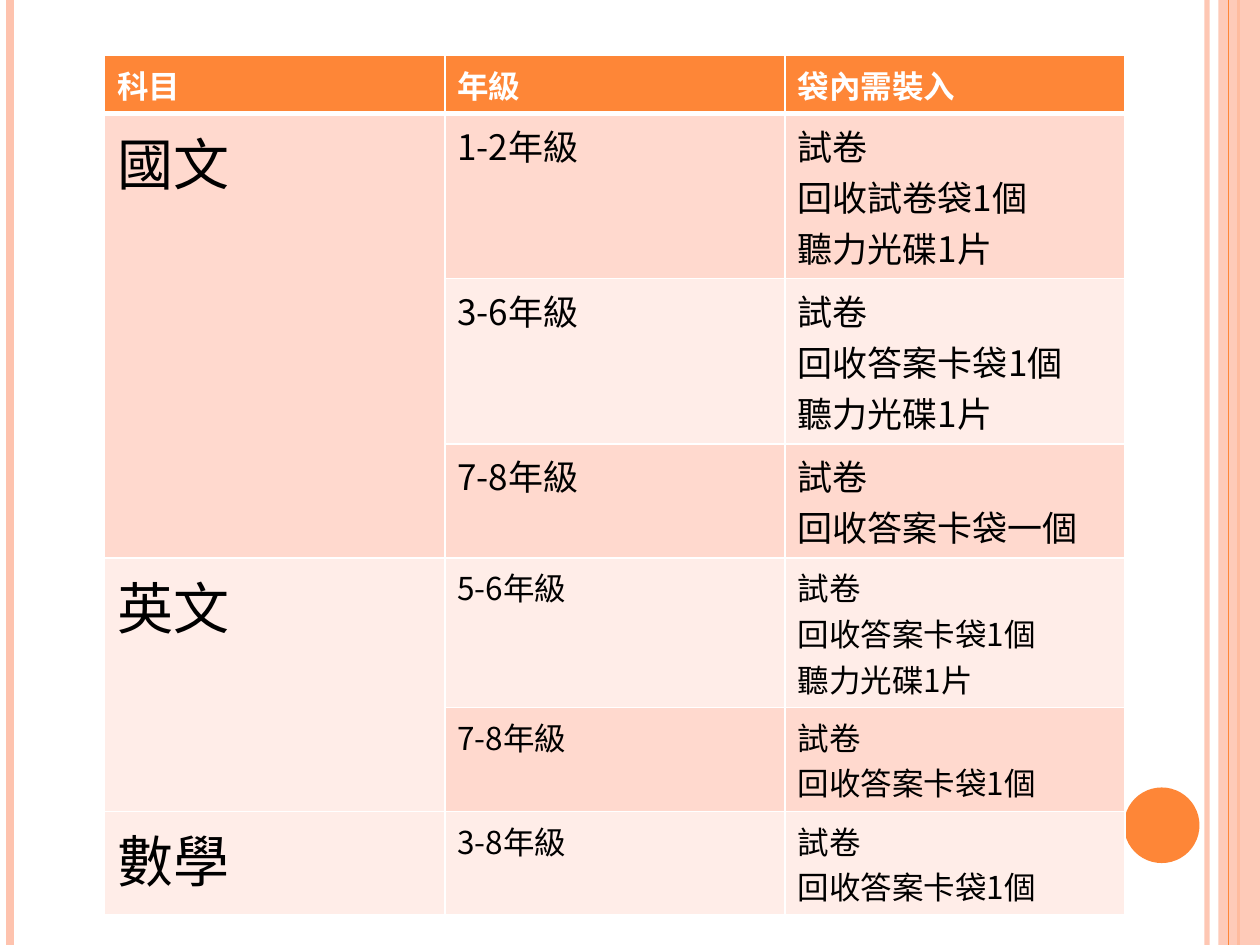
from dataclasses import dataclass

from lxml import etree
from pptx import Presentation
from pptx.dml.color import RGBColor
from pptx.enum.shapes import MSO_CONNECTOR, MSO_SHAPE
from pptx.oxml.ns import qn
from pptx.util import Inches, Pt

STRAIGHT = MSO_CONNECTOR.STRAIGHT
RECTANGLE = MSO_SHAPE.RECTANGLE
OVAL = MSO_SHAPE.OVAL


@dataclass(frozen=True)
class Theme:
    """Colours, fonts and type sizes of the slide."""
    background: str = "FFFFFF"
    accent: str = "FE8637"
    pale_accent: str = "FEC3AE"
    bands: tuple = ("FFEDE8", "FFD9CE")
    text: str = "000000"
    body_font: str = "Noto Sans CJK JP"
    header_font: str = "TeX Gyre Schola"
    subject_size: int = 32
    large_size: int = 20
    normal_size: int = 18
    thin_border: int = 1
    thick_border: int = 3


THEME = Theme()
WIDTH, HEIGHT = 10, 7.5
TABLE_LEFT, TABLE_TOP, COLUMN_WIDTH = 0.83, 0.44, 2.7
ROW_HEIGHTS = (0.41, 1.11, 1.11, 0.77, 1.01, 0.71, 0.71)
HEADERS = ("科目", "年級", "袋內需裝入")
PAPER, CARD_BAG, DISC = "試卷", "回收答案卡袋1個", "聽力光碟1片"
SUBJECTS = (
    ("國文", THEME.large_size, (
        ("1-2年級", (PAPER, "回收試卷袋1個", DISC)),
        ("3-6年級", (PAPER, CARD_BAG, DISC)),
        ("7-8年級", (PAPER, "回收答案卡袋一個")))),
    ("英文", THEME.normal_size, (
        ("5-6年級", (PAPER, CARD_BAG, DISC)),
        ("7-8年級", (PAPER, CARD_BAG)))),
    ("數學", THEME.normal_size, (
        ("3-8年級", (PAPER, CARD_BAG)),)),
)


def set_solid_fill(fill, color, opacity=100):
    """Fill with one colour at an opacity given in percent."""
    fill.solid()
    fill.fore_color.rgb = RGBColor.from_string(color)
    if opacity < 100:
        for node in fill._xPr.iter(qn("a:srgbClr")):
            etree.SubElement(node, qn("a:alpha"), val=str(opacity * 1000))


def add_vertical_line(slide, left, color, weight, opacity=100):
    """Draw a line over the full height of the slide."""
    line = slide.shapes.add_connector(
        STRAIGHT, Inches(left), 0, Inches(left), Inches(HEIGHT))
    line.line.width = Pt(weight)
    set_solid_fill(line.line.fill, color, opacity)
    etree.SubElement(line._element.spPr, qn("a:effectLst"))


def add_plain_shape(slide, kind, box, color, opacity=100):
    """Add a filled shape without outline or shadow."""
    shape = slide.shapes.add_shape(kind, *map(Inches, box))
    shape.shadow.inherit = False
    shape.line.fill.background()
    set_solid_fill(shape.fill, color, opacity)


def write_text(cell, lines, size, color=THEME.text, font=THEME.body_font, bold=False):
    """Write one paragraph per line with a shared format."""
    cell.text = "\n".join(lines)
    for paragraph in cell.text_frame.paragraphs:
        for run in paragraph.runs:
            run.font.size = Pt(size)
            run.font.bold = bold
            run.font.name = font
            run.font.color.rgb = RGBColor.from_string(color)
            east_asian = etree.Element(qn("a:ea"), typeface=THEME.body_font)
            run.font._element.find(qn("a:latin")).addnext(east_asian)


def style_cell(cell, row):
    """Give a cell its borders and the fill of its row."""
    properties = cell._tc.get_or_add_tcPr()
    thick_side = {0: "B", 1: "T"}.get(row)
    for side in "LRTB":
        weight = THEME.thick_border if side == thick_side else THEME.thin_border
        border = etree.SubElement(
            properties, qn(f"a:ln{side}"), w=str(Pt(weight)))
        fill = etree.SubElement(border, qn("a:solidFill"))
        etree.SubElement(fill, qn("a:srgbClr"), val=THEME.background)
    color = THEME.bands[row % 2] if row else THEME.accent
    set_solid_fill(cell.fill, color)


def add_packing_table(slide):
    """Add the table of what goes into each bag."""
    row_count, column_count = len(ROW_HEIGHTS), len(HEADERS)
    table = slide.shapes.add_table(
        row_count, column_count, Inches(TABLE_LEFT), Inches(TABLE_TOP),
        Inches(COLUMN_WIDTH * column_count), Inches(sum(ROW_HEIGHTS))).table
    for column in table.columns:
        column.width = Inches(COLUMN_WIDTH)
    for index, height in enumerate(ROW_HEIGHTS):
        table.rows[index].height = Inches(height)
        for column in range(column_count):
            style_cell(table.cell(index, column), index)
    for column, header in enumerate(HEADERS):
        write_text(table.cell(0, column), [header], THEME.normal_size,
                   color=THEME.background, font=THEME.header_font, bold=True)
    row = 1
    for subject, size, grades in SUBJECTS:
        subject_cell = table.cell(row, 0)
        if len(grades) > 1:
            subject_cell.merge(table.cell(row + len(grades) - 1, 0))
        write_text(subject_cell, [subject], THEME.subject_size)
        for grade, contents in grades:
            write_text(table.cell(row, 1), [grade], size)
            write_text(table.cell(row, 2), contents, size)
            row += 1


def add_side_decoration(slide):
    """Draw the stripes at the edges and the round accent."""
    add_vertical_line(slide, 9.58, THEME.pale_accent, 3, opacity=93)
    add_vertical_line(slide, 0.08, THEME.pale_accent, 4.5)
    add_vertical_line(slide, 9.83, THEME.accent, 1.5)
    add_plain_shape(slide, RECTANGLE, (9.67, 0, 0.33, HEIGHT),
                    THEME.pale_accent, opacity=87)
    add_vertical_line(slide, 9.75, THEME.accent, 0.75)
    add_plain_shape(slide, OVAL, (8.92, 6.25, 0.6, 0.6), THEME.accent)


def main():
    """Build the slide and save it."""
    presentation = Presentation()
    presentation.slide_width = Inches(WIDTH)
    presentation.slide_height = Inches(HEIGHT)
    slide = presentation.slides.add_slide(presentation.slide_layouts[6])
    set_solid_fill(slide.background.fill, THEME.background)
    add_side_decoration(slide)
    add_packing_table(slide)
    presentation.save("out.pptx")


if __name__ == "__main__":
    main()
